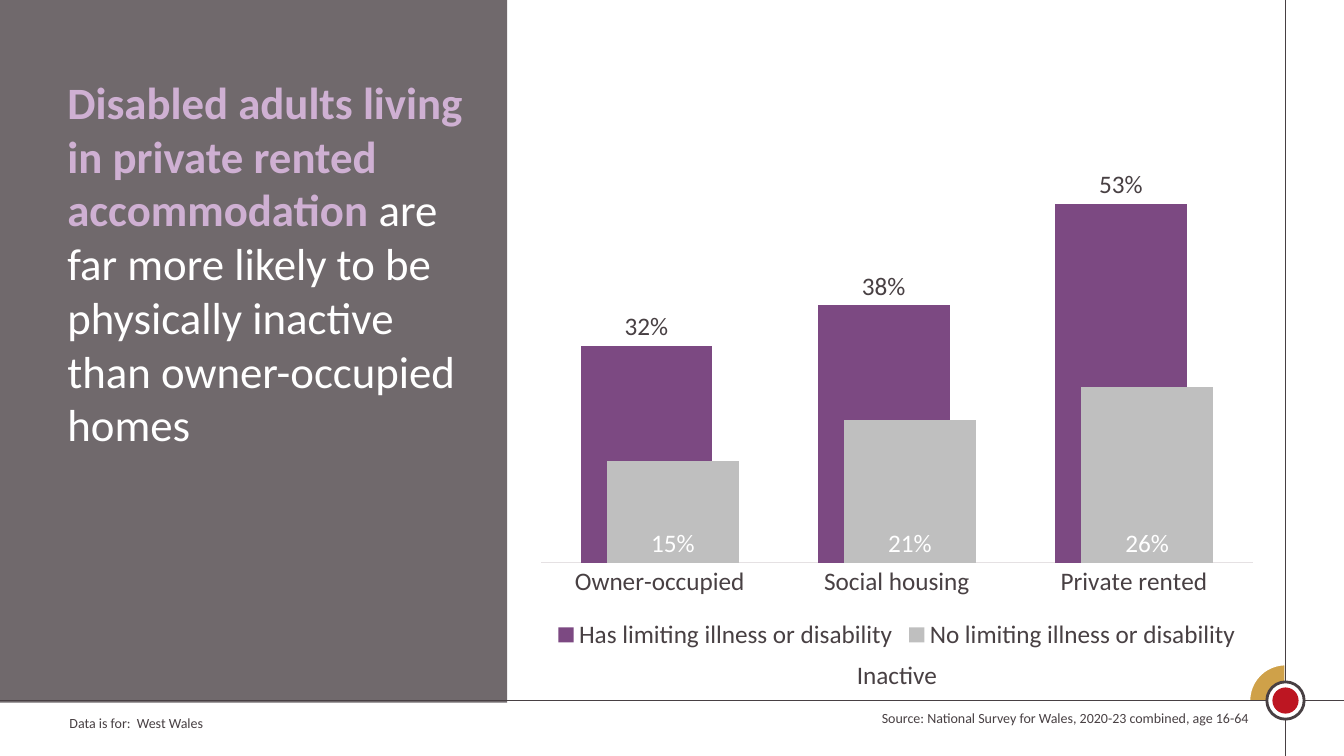
"""Build the slide on inactivity among disabled adults by housing tenure."""
from lxml.etree import SubElement
from pptx import Presentation
from pptx.chart.data import CategoryChartData
from pptx.dml.color import RGBColor
from pptx.enum.chart import XL_CHART_TYPE, XL_LABEL_POSITION, XL_LEGEND_POSITION, XL_TICK_MARK
from pptx.enum.shapes import MSO_CONNECTOR, MSO_SHAPE
from pptx.enum.text import PP_ALIGN
from pptx.oxml.ns import qn
from pptx.util import Inches, Pt

WIDTH, HEIGHT = 13.33, 7.5
FONT = "Calibri"
COLOURS = {"ink": "484043", "white": "FFFFFF", "lilac": "CFB0D3", "purple": "7C4982",
           "grey": "BFBFBF", "axis": "E5E1E3", "gold": "CFA149", "red": "BD1622"}
HEADLINE = [
    ("Disabled adults living in private rented accommodation ", "lilac", True),
    ("are far more likely to be physically inactive than owner-occupied homes", "white", False),
]
CAPTIONS = [
    ("Data is for:  West Wales", (0.59, 7.04, 4.39, 0.27), 10, PP_ALIGN.LEFT),
    ("Source: National Survey for Wales, 2020-23 combined, age 16-64",
     (8.32, 6.99, 4.16, 0.27), 10, PP_ALIGN.RIGHT),
    ("Inactive", (8.4, 6.49, 1.22, 0.4), 18, PP_ALIGN.LEFT),
]
TENURES = ["Owner-occupied", "Social housing", "Private rented"]
GROUPS = [
    ("Has limiting illness or disability", (0.32, 0.38, 0.53), "purple", "ink",
     XL_LABEL_POSITION.OUTSIDE_END),
    ("No limiting illness or disability", (0.15, 0.21, 0.26), "grey", "white",
     XL_LABEL_POSITION.INSIDE_BASE),
]
CROSSING = (12.75, 6.95)
RULES = [(CROSSING[0], 0, CROSSING[0], HEIGHT), (0, CROSSING[1], WIDTH, CROSSING[1])]


def colour(name):
    return RGBColor.from_string(COLOURS[name])


def style_font(font, size, name):
    font.name, font.size = FONT, Pt(size)
    font.color.rgb = colour(name)


def add_filled(shapes, preset, box, fill, line=None, line_width=0):
    shape = shapes.add_shape(preset, *map(Inches, box))
    shape.shadow.inherit = False
    shape.fill.solid()
    shape.fill.fore_color.rgb = colour(fill)
    if line:
        shape.line.color.rgb = colour(line)
        shape.line.width = Pt(line_width)
    else:
        shape.line.fill.background()
    return shape


def at_crossing(size):
    return CROSSING[0] - size / 2, CROSSING[1] - size / 2, size, size


def add_text(shapes, box):
    frame = shapes.add_textbox(*map(Inches, box)).text_frame
    frame.word_wrap = True
    return frame.paragraphs[0]


def add_frame(shapes):
    quarter = add_filled(shapes, MSO_SHAPE.PIE, at_crossing(0.72), "gold", "white", 1.5)
    quarter.adjustments[0], quarter.adjustments[1] = 106.62, 162
    for ends in RULES:
        rule = shapes.add_connector(MSO_CONNECTOR.STRAIGHT, *map(Inches, ends))
        rule.line.color.rgb = colour("ink")
        rule.line.width = Pt(1)
        SubElement(rule.element.spPr, qn("a:effectLst"))
    badge = shapes.add_group_shape().shapes
    add_filled(badge, MSO_SHAPE.OVAL, at_crossing(0.37), "white", "ink", 2)
    add_filled(badge, MSO_SHAPE.OVAL, at_crossing(0.26), "red")
    panel = add_filled(shapes, MSO_SHAPE.RECTANGLE, (-0.01, 0, 5.04, 6.97), "ink")
    tint = panel.element.spPr.find(qn("a:solidFill"))[0]
    SubElement(tint, qn("a:alpha"), val="78000")


def add_words(shapes):
    headline = add_text(shapes, (0.57, 0.69, 4.31, 3.77))
    headline.font.name, headline.font.size = FONT, Pt(32)
    headline.line_spacing = Pt(38.4)
    for words, name, bold in HEADLINE:
        run = headline.add_run()
        run.text = words
        run.font.bold = bold
        run.font.color.rgb = colour(name)
    for words, box, size, alignment in CAPTIONS:
        caption = add_text(shapes, box)
        caption.text, caption.alignment = words, alignment
        style_font(caption.font, size, "ink")


def add_inactivity_chart(shapes):
    rates = CategoryChartData(number_format="0%")
    rates.categories = TENURES
    for group in GROUPS:
        rates.add_series(*group[:2])
    box = map(Inches, (5.22, 1.45, 7.35, 5.05))
    chart = shapes.add_chart(XL_CHART_TYPE.COLUMN_CLUSTERED, *box, rates).chart
    style_font(chart.font, 18, "ink")
    chart.has_title = False
    chart.has_legend = True
    chart.legend.position = XL_LEGEND_POSITION.BOTTOM
    chart.legend.include_in_layout = False
    style_font(chart.legend.font, 18, "ink")

    tenure_axis, rate_axis = chart.category_axis, chart.value_axis
    tenure_axis.major_tick_mark = XL_TICK_MARK.NONE
    tenure_axis.format.line.color.rgb = colour("axis")
    tenure_axis.format.line.width = Pt(0.75)
    style_font(tenure_axis.tick_labels.font, 18, "ink")
    rate_axis.visible = False
    rate_axis.has_major_gridlines = False
    rate_axis.minimum_scale, rate_axis.maximum_scale = 0, 0.6

    plot = chart.plots[0]
    plot.gap_width, plot.overlap = 60, 80
    plot.vary_by_categories = False
    for series, (_, _, fill, label_colour, position) in zip(plot.series, GROUPS):
        series.format.fill.solid()
        series.format.fill.fore_color.rgb = colour(fill)
        labels = series.data_labels
        labels.show_value = True
        labels.number_format, labels.number_format_is_linked = "0%", False
        labels.position = position
        style_font(labels.font, 18, label_colour)


def main():
    deck = Presentation()
    deck.slide_width, deck.slide_height = Inches(WIDTH), Inches(HEIGHT)
    shapes = deck.slides.add_slide(deck.slide_layouts[6]).shapes
    add_frame(shapes)
    add_words(shapes)
    add_inactivity_chart(shapes)
    deck.save("out.pptx")


if __name__ == "__main__":
    main()
